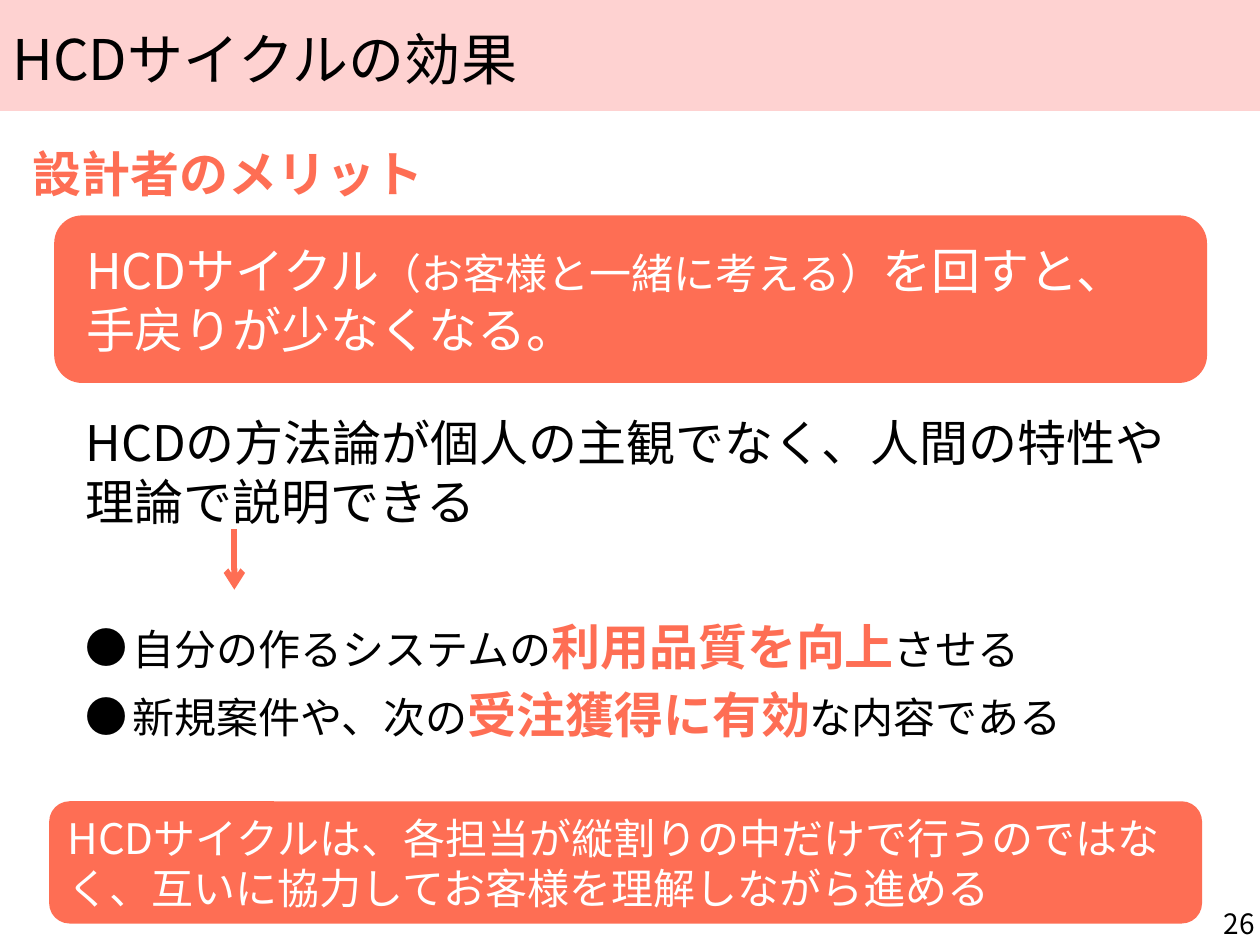
import pptx
import pptx.util
import pptx.dml.color
import pptx.enum.shapes
import pptx.enum.text
import pptx.oxml.ns
import lxml.etree

RGB = pptx.dml.color.RGBColor
CORAL = RGB(0xFE, 0x6E, 0x54)
PINK = RGB(0xFE, 0xD2, 0xD1)
BLACK = RGB(0, 0, 0)
WHITE = RGB(0xFF, 0xFF, 0xFF)
FONT = "Noto Sans CJK JP"
KIND = pptx.enum.shapes.MSO_SHAPE
MID = pptx.enum.text.MSO_ANCHOR.MIDDLE
LOW = pptx.enum.text.MSO_ANCHOR.BOTTOM
TOP = pptx.enum.text.MSO_ANCHOR.TOP
ALIGN = pptx.enum.text.PP_ALIGN
COLS, ROWS = 100, 75
CELL = pptx.util.Inches(0.1)
GAP = pptx.util.Pt(5.6)
BREAK = "\v"


def grid(n):
    return pptx.util.Emu(round(n * CELL))


def sub(node, tag, **attrs):
    return lxml.etree.SubElement(node, pptx.oxml.ns.qn(tag), **attrs)


def write(para, parts, color, align=ALIGN.LEFT):
    """Add (text, size, accent) parts; accented parts are bold coral."""
    para.alignment = align
    for text, size, accent in parts:
        if text == BREAK:
            para.add_line_break()
            continue
        run = para.add_run()
        run.text = text
        font = run.font
        font.name, font.size, font.bold = FONT, pptx.util.Pt(size), accent
        font.color.rgb = CORAL if accent else color
        sub(font._element, "a:ea", typeface=FONT)


def frame(shape, anchor, pad=(1, 0.5, 1, 0.5), wrap=True):
    body = shape.text_frame
    body.word_wrap, body.vertical_anchor = wrap, anchor
    (body.margin_left, body.margin_top,
     body.margin_right, body.margin_bottom) = map(grid, pad)
    return body


def label(slide, box, anchor=TOP, **opts):
    return frame(slide.shapes.add_textbox(*map(grid, box)), anchor, **opts)


def block(slide, box, kind, fill):
    shape = slide.shapes.add_shape(kind, *map(grid, box))
    shape.shadow.inherit = False
    shape.fill.solid()
    shape.fill.fore_color.rgb = fill
    shape.line.fill.background()
    return shape


def header(slide, box, text):
    x, y, w, h = box
    block(slide, box, KIND.RECTANGLE, PINK)
    body = label(slide, (x, y + 0.8, w - 5.5, h - 0.5), MID, pad=(1, 2, 1, 0.4))
    para = body.paragraphs[0]
    para.line_spacing = pptx.util.Pt(22)
    write(para, [(text, 32, False)], BLACK)


def banner(slide, box, parts, inset=0):
    body = frame(block(slide, box, KIND.ROUNDED_RECTANGLE, CORAL), MID)
    para = body.paragraphs[0]
    para.space_before = GAP
    para._p.get_or_add_pPr().set("marL", str(grid(inset)))
    write(para, parts, WHITE)


def bullets(slide, box, items):
    body = label(slide, box)
    for i, parts in enumerate(items):
        para = body.paragraphs[0] if i == 0 else body.add_paragraph()
        para.space_before = GAP
        write(para, parts, BLACK)
        props = para._p.get_or_add_pPr()
        props.set("marL", str(grid(3.75)))
        props.set("indent", str(-grid(3.75)))
        sub(props, "a:buFont", typeface=FONT)
        sub(props, "a:buChar", char="●")


def arrow(slide, box):
    x, y, w, h = box
    line = slide.shapes.add_connector(
        pptx.enum.shapes.MSO_CONNECTOR.STRAIGHT,
        *map(grid, (x, y, x + w, y + h)))
    line.line.color.rgb = CORAL
    line.line.width = pptx.util.Pt(3.5)
    sub(line.line._get_or_add_ln(), "a:tailEnd", type="arrow")
    sub(line._element.spPr, "a:effectLst")


def reason(slide, box):
    """Claim, arrow and the two results that follow from it."""
    x, y, w, h = box
    body = label(slide, (x, y, w, 9.3), MID, pad=(1, 0.5, 0, 0.5))
    para = body.paragraphs[0]
    para.space_before = GAP
    write(para, [("HCDの方法論が個人の主観でなく、人間の特性や理論で説明できる",
                  28, False)], BLACK)
    bullets(slide, (x, y + h - 14.4, w, 14.4), [
        [("自分の作るシステムの", 24, False), ("利用品質を向上", 28, True),
         ("させる", 24, False)],
        [("新規案件や、次の", 24, False), ("受注獲得に有効", 28, True),
         ("な内容である", 24, False)],
    ])
    arrow(slide, (x + 12.8, y + 9.2, 0, 4.8))


def main():
    deck = pptx.Presentation()
    deck.slide_width, deck.slide_height = grid(COLS), grid(ROWS)
    slide = deck.slides.add_slide(deck.slide_layouts[6])

    # Title band and section heading
    header(slide, (0, 0, COLS, 8.8), "HCDサイクルの効果")
    head = label(slide, (1.6, 10.9, 33.4, 5.7), wrap=False)
    write(head.paragraphs[0], [("設計者のメリット", 28, True)], CORAL)

    # Reasoning between the two banners
    reason(slide, (5.8, 32.8, 87.6, 30))

    # Page number
    page = label(slide, (COLS - 5.9, ROWS - 4, 5.9, 4), LOW, pad=(0.4,) * 4)
    write(page.paragraphs[0], [("26", 16, False)], BLACK, ALIGN.RIGHT)

    # Key message and closing banners
    banner(slide, (4.3, 17.1, 91.5, 13.3), [
        ("HCDサイクル", 28, False), ("（お客様と一緒に考える）", 24, False),
        ("を回すと、", 28, False), (BREAK, 28, False),
        ("手戻りが少なくなる。", 28, False)], inset=0.9)
    banner(slide, (3.9, 63.6, 91.5, 9.7), [
        ("HCDサイクルは、各担当が縦割りの中だけで行うのではなく、"
         "互いに協力してお客様を理解しながら進める", 24, False)])

    deck.save("out.pptx")


if __name__ == "__main__":
    main()
